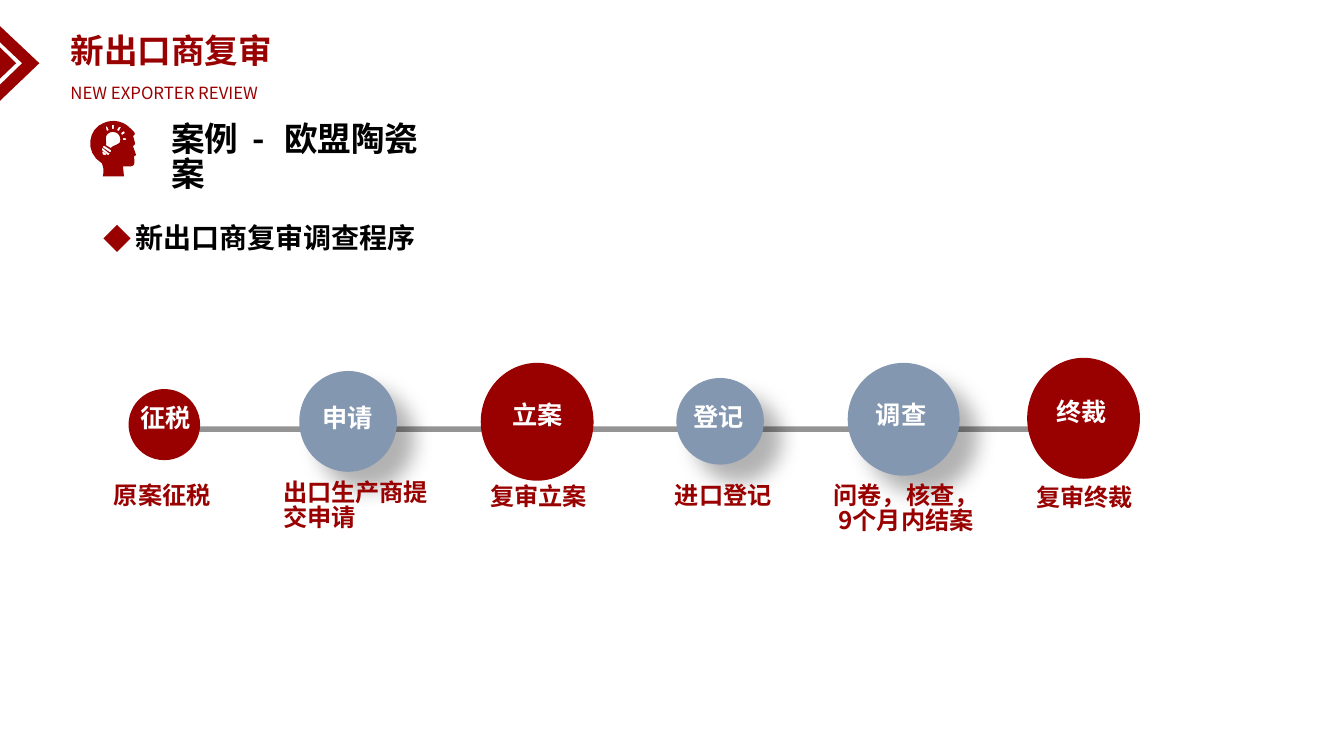
from pptx import Presentation
from pptx.dml.color import RGBColor
from pptx.enum.shapes import MSO_SHAPE
from pptx.enum.text import MSO_ANCHOR, MSO_AUTO_SIZE, PP_ALIGN
from pptx.oxml import parse_xml
from pptx.oxml.ns import qn
from pptx.util import Pt
from lxml.etree import SubElement

FONT = "Noto Sans CJK SC"
RED, BLUE, GREY, BLACK, WHITE = "990000", "8497B0", "949494", "000000", "FFFFFF"
A_NS = 'xmlns:a="http://schemas.openxmlformats.org/drawingml/2006/main"'


def paint(shape, color):
    shape.fill.solid()
    shape.fill.fore_color.rgb = RGBColor.from_string(color)
    shape.line.fill.background()
    shape.shadow.inherit = False


def write(text, box, size=18, color=BLACK, bold=True, align=PP_ALIGN.LEFT,
          wrap=True, spacing=0.86, shape=None):
    """Each line of text is a paragraph; a tab-free '|' parts runs."""
    left, top, width, height = (Pt(value) for value in box)
    if shape is None:
        shape = slide.shapes.add_textbox(left, top, width, height)
    else:
        shape.left, shape.top, shape.width, shape.height = left, top, width, height
    frame = shape.text_frame
    frame.word_wrap = wrap
    frame.auto_size = MSO_AUTO_SIZE.NONE
    frame.vertical_anchor = MSO_ANCHOR.TOP
    frame.margin_left = frame.margin_right = Pt(7.2)
    frame.margin_top = frame.margin_bottom = Pt(3.6)
    for index, line in enumerate(text.split("\n")):
        paragraph = frame.add_paragraph() if index else frame.paragraphs[0]
        paragraph.alignment = align
        paragraph.line_spacing = spacing
        paragraph.space_before = Pt(0)
        for part in line.split("|"):
            run = paragraph.add_run()
            run.text = part
            run.font.size, run.font.bold, run.font.name = Pt(size), bold, FONT
            run.font.color.rgb = RGBColor.from_string(color)
            SubElement(run.font._element, qn("a:ea")).set("typeface", FONT)
    return shape


presentation = Presentation()
presentation.slide_width, presentation.slide_height = Pt(960), Pt(540)
slide = presentation.slides.add_slide(presentation.slide_layouts[5])

# Title and subtitle
write("新出口商复审", (43.2, 23.8, 280.8, 34.6), size=24, color=RED,
      spacing=0.78, shape=slide.shapes.title)
write("NEW EXPORTER REVIEW", (43.2, 58.3, 157.7, 20.2), size=12, color=RED,
      bold=False, wrap=False, spacing=0.78)

# Chevrons at the left edge
chevrons = [
    [(0, 33.8), (11.5, 45.2), (0, 56.2)],
    [(0, 18.7), (28.1, 45.2), (0, 72), (0, 60.5), (15.8, 45.2), (0, 30.2)],
]
for points in chevrons:
    builder = slide.shapes.build_freeform(*[value * 100 for value in points[0]], scale=Pt(0.01))
    builder.add_line_segments([(x * 100, y * 100) for x, y in points[1:]], close=True)
    paint(builder.convert_to_shape(), RED)

# Head with a light bulb, in hundredths of an inch: pairs are corners, sixes are curves
head_outlines = [
    [(102, 150), (101, 152, 102, 153, 103, 154), (104, 154, 105, 154, 106, 153)],
    [(116, 132), (112, 130, 108, 131, 106, 134), (104, 137, 106, 141, 105, 144),
     (110, 147), (112, 144, 117, 144, 119, 141), (120, 138, 119, 134, 116, 132)],
    [(110, 149), (104, 145), (103, 145, 103, 145, 102, 145), (102, 146, 102, 146, 103, 147),
     (109, 151), (109, 151, 110, 151, 110, 151), (110, 150, 110, 150, 110, 149)],
    [(118, 130), (120, 126), (118, 126), (116, 129)],
    [(121, 134), (124, 132), (123, 130), (120, 132)],
    [(113, 128), (113, 124), (111, 124), (111, 128)],
    [(108, 129), (106, 125), (105, 126), (106, 130)],
    [(122, 139), (125, 139), (125, 137), (122, 137)],
    [(108, 152), (102, 147), (102, 147, 101, 147, 101, 148), (101, 148, 101, 149, 101, 149),
     (107, 154), (108, 154, 108, 154, 108, 153), (109, 153, 109, 152, 108, 152)],
    [(102, 175), (103, 171, 103, 166, 101, 162), (83, 151, 88, 127, 103, 122),
     (112, 118, 123, 120, 130, 128), (136, 133, 133, 134, 133, 134), (132, 135),
     (133, 138, 134, 142, 134, 143), (133, 144, 132, 145, 132, 145), (135, 154),
     (133, 155), (133, 158, 134, 160, 133, 163), (133, 163, 132, 165, 130, 165),
     (122, 165), (123, 175)],
]
builder = None
for outline in head_outlines:
    points = [outline[0]]
    for step in outline[1:]:
        if len(step) == 2:
            points.append(step)
            continue
        corners = [points[-1], step[0:2], step[2:4], step[4:6]]
        for t in [n / 8 for n in range(1, 9)]:
            weights = ((1 - t) ** 3, 3 * t * (1 - t) ** 2, 3 * t * t * (1 - t), t ** 3)
            points.append(tuple(sum(w * corner[axis] for w, corner in zip(weights, corners))
                                for axis in (0, 1)))
    points = [(x * 72, y * 72) for x, y in points]
    if builder is None:
        builder = slide.shapes.build_freeform(*points[0], scale=Pt(0.01))
    else:
        builder.move_to(*points[0])
    builder.add_line_segments(points[1:], close=True)
paint(builder.convert_to_shape(), RED)

# Case heading, with loose spacing around the dash
heading = write("案例| - |欧盟陶瓷案", (115.2, 85, 209.5, 66), size=24)
heading.text_frame.paragraphs[0].runs[1].font._element.set("spc", "430")

# Bulleted line
bullet_line = write("新出口商复审调查程序", (67, 157.7, 786.2, 31.7), size=20)
properties = bullet_line.text_frame.paragraphs[0]._p.get_or_add_pPr()
properties.set("marL", str(Pt(22.5)))
properties.set("indent", str(-Pt(22.5)))
bullet_color = SubElement(properties, qn("a:buClr"))
SubElement(bullet_color, qn("a:srgbClr")).set("val", RED)
SubElement(properties, qn("a:buFont")).set("typeface", FONT)
SubElement(properties, qn("a:buChar")).set("char", "◆")

# Timeline bar
bar = slide.shapes.add_shape(MSO_SHAPE.RECTANGLE, Pt(139.7), Pt(304.6), Pt(604), Pt(3.9))
paint(bar, GREY)

# Stages: name, circle colour, circle box, name box, caption, caption box, caption format
CENTER, LEFT = PP_ALIGN.CENTER, PP_ALIGN.LEFT
stages = [
    ("征税", RED, (91.8, 277.9, 51.1, 50.8), (89.3, 287.3, 57.6, 28.8),
     "原案征税", (67, 342.7, 97.9, 28.1), CENTER, True),
    ("申请", BLUE, (213.8, 265, 69.8, 72), (217.4, 287.3, 61.9, 28.8),
     "出口生产商提交申请", (195.1, 340.6, 120.2, 49), LEFT, True),
    ("立案", RED, (343.4, 259.2, 80.6, 84.2), (355, 285.1, 57.6, 28.8),
     "复审立案", (342, 343.4, 85.7, 28.1), CENTER, False),
    ("登记", BLUE, (483.1, 270, 62.6, 61.9), (482.4, 286.6, 61.9, 28.8),
     "进口登记", (473.8, 342.7, 85.7, 28.1), CENTER, False),
    ("调查", BLUE, (605.5, 259.2, 79.9, 80.6), (612.7, 285.1, 61.9, 28.8),
     "问卷，核查，\n9个月内结案", (587.5, 342.7, 119.5, 49), CENTER, False),
    ("终裁", RED, (733.7, 255.6, 80.6, 86.4), (743.8, 283, 57.6, 28.8),
     "复审终裁", (725.8, 344.2, 97.9, 28.1), CENTER, True),
]
for name, color, circle_box, name_box, caption, caption_box, align, wrap in stages:
    circle = slide.shapes.add_shape(MSO_SHAPE.OVAL, *[Pt(value) for value in circle_box])
    paint(circle, color)
    if color == BLUE:
        effects = circle._element.spPr.find(qn("a:effectLst"))
        effects.append(parse_xml(
            f'<a:outerShdw {A_NS} blurRad="{Pt(15)}" dist="{Pt(18)}" dir="2700000" '
            'algn="tl" rotWithShape="0"><a:srgbClr val="000000"><a:alpha val="30000"/>'
            '</a:srgbClr></a:outerShdw>'))
    write(name, name_box, color=WHITE, align=CENTER)
    write(caption, caption_box, size=17.3, color=RED, align=align, wrap=wrap)

presentation.save("out.pptx")
